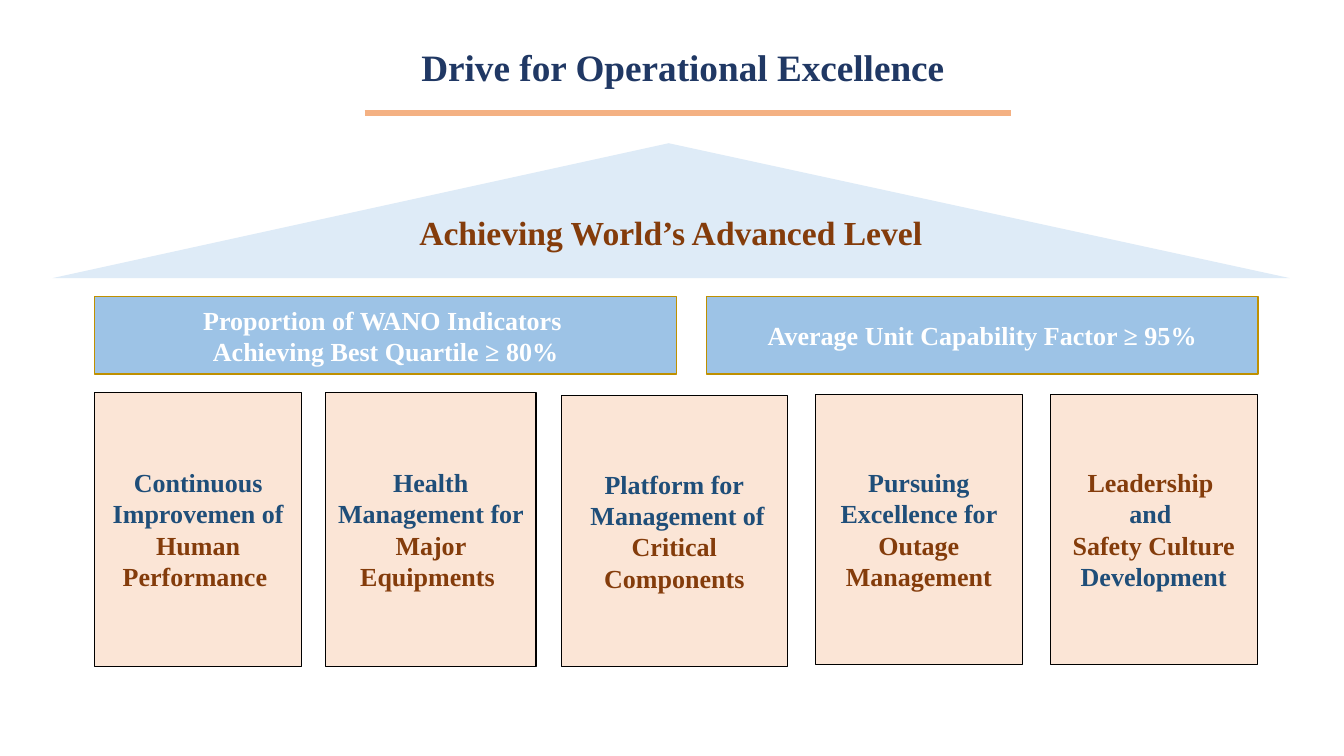
from lxml import etree
from pptx import Presentation
from pptx import util as u
from pptx.dml.color import RGBColor
from pptx.enum import shapes, text
from pptx.oxml import ns

COLORS = {
    "navy": "203864", "blue": "1F4E79", "brown": "843C0B", "white": "FFFFFF",
    "orange": "F4B183", "roof": "DEEBF7", "bar": "9DC3E6", "gold": "BF9000",
    "pillar": "FBE5D6", "black": "000000",
}


def color(name):
    return RGBColor.from_string(COLORS[name])


def write(frame, paragraphs, size=18.6, font="Times New Roman",
          anchor=text.MSO_ANCHOR.MIDDLE, after=0):
    frame.word_wrap = True
    frame.auto_size = text.MSO_AUTO_SIZE.NONE
    frame.vertical_anchor = anchor
    for index, spans in enumerate(paragraphs):
        para = frame.add_paragraph() if index else frame.paragraphs[0]
        para.alignment = text.PP_ALIGN.CENTER
        para.line_spacing = 1.0
        para.space_before = u.Pt(0)
        para.space_after = u.Pt(after)
        for words, name in spans:
            span = para.add_run()
            span.text = words
            span.font.name = font
            span.font.size = u.Pt(size)
            span.font.bold = True
            span.font.color.rgb = color(name)


class Board:
    def __init__(self, deck):
        self.page = deck.slides.add_slide(deck.slide_layouts[5])

    def title(self, words, left, top, width, height):
        box = self.page.shapes.title
        box.left, box.top, box.width, box.height = map(u.Cm, (left, top, width, height))
        write(box.text_frame, [[(words, "navy")]], size=26.6,
              anchor=text.MSO_ANCHOR.TOP, after=6)

    def label(self, paragraphs, left, top, width, height, size):
        box = self.page.shapes.add_textbox(*map(u.Cm, (left, top, width, height)))
        write(box.text_frame, paragraphs, size=size)

    def shape(self, kind, left, top, width, height, fill, line=None, weight=1, paragraphs=()):
        box = self.page.shapes.add_shape(kind, *map(u.Cm, (left, top, width, height)))
        box.shadow.inherit = False
        box.fill.solid()
        box.fill.fore_color.rgb = color(fill)
        if line:
            box.line.color.rgb = color(line)
            box.line.width = u.Pt(weight)
        else:
            box.line.fill.background()
        write(box.text_frame, paragraphs)
        return box

    def rule(self, left, right, height, name, weight):
        line = self.page.shapes.add_connector(
            shapes.MSO_CONNECTOR.STRAIGHT, *map(u.Cm, (left, height, right, height)))
        line.line.color.rgb = color(name)
        line.line.width = u.Pt(weight)
        etree.SubElement(line._element.spPr, ns.qn("a:effectLst"))


def main():
    deck = Presentation()
    deck.slide_width, deck.slide_height = u.Cm(33.87), u.Cm(19.05)
    board = Board(deck)
    rectangle = shapes.MSO_SHAPE.RECTANGLE

    board.title("Drive for Operational Excellence", 3.33, 0.99, 27.79, 1.4)
    board.rule(9.19, 25.48, 2.84, "orange", 4.5)

    roof = board.shape(shapes.MSO_SHAPE.ISOSCELES_TRIANGLE, 1.32, 3.61, 31.19, 3.4, "roof")
    roof.adjustments[0] = 0.498
    board.label([[("Achieving World’s Advanced Level", "brown")]], 5.74, 5.21, 22.33, 1.27, 24)

    bars = [
        (2.39, 14.66, ["Proportion of WANO Indicators ", "Achieving Best Quartile ≥ 80%"]),
        (17.81, 13.89, ["Average Unit Capability Factor ≥ 95%"]),
    ]
    for left, width, lines in bars:
        board.shape(rectangle, left, 7.47, width, 1.96, "bar", "gold", 1,
                    [[(line, "white")] for line in lines])

    pillars = [
        (2.39, 9.88, 5.21, 6.91,
         [[("Continuous Improvemen of ", "blue"), ("Human Performance ", "brown")]]),
        (8.2, 9.88, 5.31, 6.91,
         [[("Health Management for ", "blue"), ("Major Equipments ", "brown")]]),
        (14.15, 9.96, 5.69, 6.83,
         [[("Platform for", "blue")],
          [(" Management of ", "blue"), ("Critical Components", "brown")]]),
        (20.55, 9.93, 5.21, 6.81,
         [[("Pursuing Excellence for ", "blue"), ("Outage Management", "brown")]]),
        (26.47, 9.93, 5.21, 6.81,
         [[("Leadership ", "brown")], [("and ", "blue")],
          [("Safety Culture", "brown")], [("Development", "blue")]]),
    ]
    for left, top, width, height, paragraphs in pillars:
        board.shape(rectangle, left, top, width, height, "pillar", "black", 0.75, paragraphs)

    deck.save("out.pptx")


if __name__ == "__main__":
    main()
